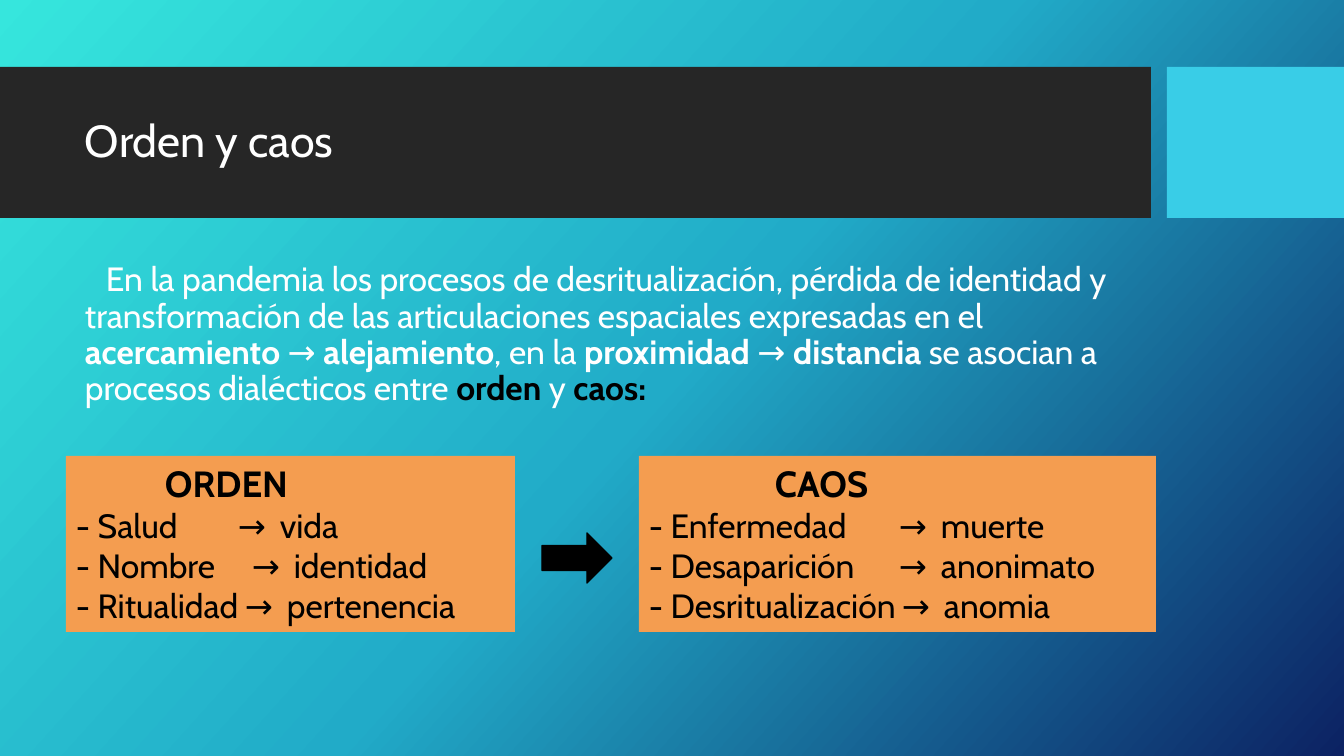
from copy import deepcopy
from dataclasses import dataclass

from lxml import etree
from pptx import Presentation
from pptx import util as u
from pptx.dml.color import RGBColor
from pptx.enum import shapes, text
from pptx.oxml.ns import qn

EMU_PER_PX = 914400 / 100.8


@dataclass(frozen=True)
class Theme:
    font: str = "Cabin"
    title_size: int = 32
    body_size: int = 24
    heading_size: int = 26
    band: str = "262626"
    accent: str = "39CDE7"
    panel: str = "F49D50"
    light: str = "FFFFFF"
    dark: str = "000000"
    gradient: tuple = ((0, "36E6DD"), (0.5, "21ABC8"), (1, "0C2263"))
    gradient_angle: int = 42


THEME = Theme()

# Each row: concept, offset of its arrow in px, outcome
ORDER_ROWS = [
    ("Salud", 162, "vida"),
    ("Nombre", 176, "identidad"),
    ("Ritualidad", 169, "pertenencia"),
]
CHAOS_ROWS = [
    ("Enfermedad", 250, "muerte"),
    ("Desaparición", 250, "anonimato"),
    ("Desritualización", 253, "anomia"),
]
ARROW_TO_OUTCOME = 42

# Each span: wording, bold, colour
INTRO = [
    ("En la pandemia los procesos de desritualización, pérdida de identidad y "
     "transformación de las articulaciones espaciales expresadas en el ", False, THEME.light),
    ("acercamiento ", True, THEME.light),
    ("→ ", False, THEME.light),
    ("alejamiento", True, THEME.light),
    (", en la ", False, THEME.light),
    ("proximidad ", True, THEME.light),
    ("→ ", False, THEME.light),
    ("distancia ", True, THEME.light),
    ("se asocian a procesos dialécticos entre ", False, THEME.light),
    ("orden", True, THEME.dark),
    (" y ", False, THEME.light),
    ("caos:", True, THEME.dark),
]


def px(length):
    return u.Emu(round(length * EMU_PER_PX))


def paint_background(page):
    fill = page.background.fill
    fill.gradient()
    fill.gradient_angle = 360 - THEME.gradient_angle
    stop_list = next(page.element.iter(qn("a:gsLst")))
    stop_list.insert(1, deepcopy(stop_list[0]))
    for stop, (position, color) in zip(fill.gradient_stops, THEME.gradient):
        stop.position = position
        stop.color.rgb = RGBColor.from_string(color)


def add_block(page, kind, area, color):
    block = page.shapes.add_shape(kind, *map(px, area))
    block.shadow.inherit = False
    block.fill.solid()
    block.fill.fore_color.rgb = RGBColor.from_string(color)
    block.line.fill.background()
    return block


def add_text_box(page, area, anchor):
    box = page.shapes.add_textbox(*map(px, area))
    box.text_frame.word_wrap = True
    box.text_frame.vertical_anchor = anchor
    para = box.text_frame.paragraphs[0]
    para.line_spacing = 0.9
    return para


def add_span(para, words, size, color, bold=False):
    span = para.add_run()
    span.text = words
    span.font.name = THEME.font
    span.font.size = u.Pt(size)
    span.font.bold = bold
    span.font.color.rgb = RGBColor.from_string(color)


def indent(para, length):
    """Shift the first line of a paragraph."""
    para._p.get_or_add_pPr().set("indent", str(px(length)))


def set_tabs(para, offsets):
    tabs = etree.SubElement(para._p.get_or_add_pPr(), qn("a:tabLst"))
    for offset in offsets:
        etree.SubElement(tabs, qn("a:tab"), pos=str(px(offset)), algn="l")


def add_panel(page, area, heading, heading_indent, rows):
    panel = add_block(page, shapes.MSO_SHAPE.RECTANGLE, area, THEME.panel)
    frame = panel.text_frame
    frame.word_wrap = True
    frame.vertical_anchor = text.MSO_ANCHOR.TOP
    para = frame.paragraphs[0]
    para.alignment = text.PP_ALIGN.LEFT
    indent(para, heading_indent)
    add_span(para, heading, THEME.heading_size, THEME.dark, bold=True)
    for concept, arrow, outcome in rows:
        para = frame.add_paragraph()
        para.alignment = text.PP_ALIGN.LEFT
        set_tabs(para, (arrow, arrow + ARROW_TO_OUTCOME))
        add_span(para, f"- {concept}\t→\t{outcome}", THEME.body_size, THEME.dark)


def add_arrow(page, area):
    arrow = add_block(page, shapes.MSO_SHAPE.RIGHT_ARROW, area, THEME.dark)
    arrow.line.color.rgb = RGBColor.from_string(THEME.dark)
    arrow.line.width = u.Pt(1)


def main():
    deck = Presentation()
    deck.slide_width, deck.slide_height = px(1344), px(756)
    page = deck.slides.add_slide(deck.slide_layouts[6])
    paint_background(page)

    add_block(page, shapes.MSO_SHAPE.RECTANGLE, (0, 67, 1151, 151), THEME.band)
    add_block(page, shapes.MSO_SHAPE.RECTANGLE, (1167, 67, 177, 151), THEME.accent)

    title = add_text_box(page, (75, 83, 1059, 119), text.MSO_ANCHOR.MIDDLE)
    add_span(title, "Orden y caos", THEME.title_size, THEME.light)

    intro = add_text_box(page, (75, 258, 1059, 160), text.MSO_ANCHOR.TOP)
    indent(intro, 21)
    for words, bold, color in INTRO:
        add_span(intro, words, THEME.body_size, color, bold)

    add_panel(page, (66, 456, 449, 176), "ORDEN", 89, ORDER_ROWS)
    add_panel(page, (639, 456, 517, 176), "CAOS", 126, CHAOS_ROWS)
    add_arrow(page, (542, 533, 70, 50))

    deck.save("out.pptx")


if __name__ == "__main__":
    main()
